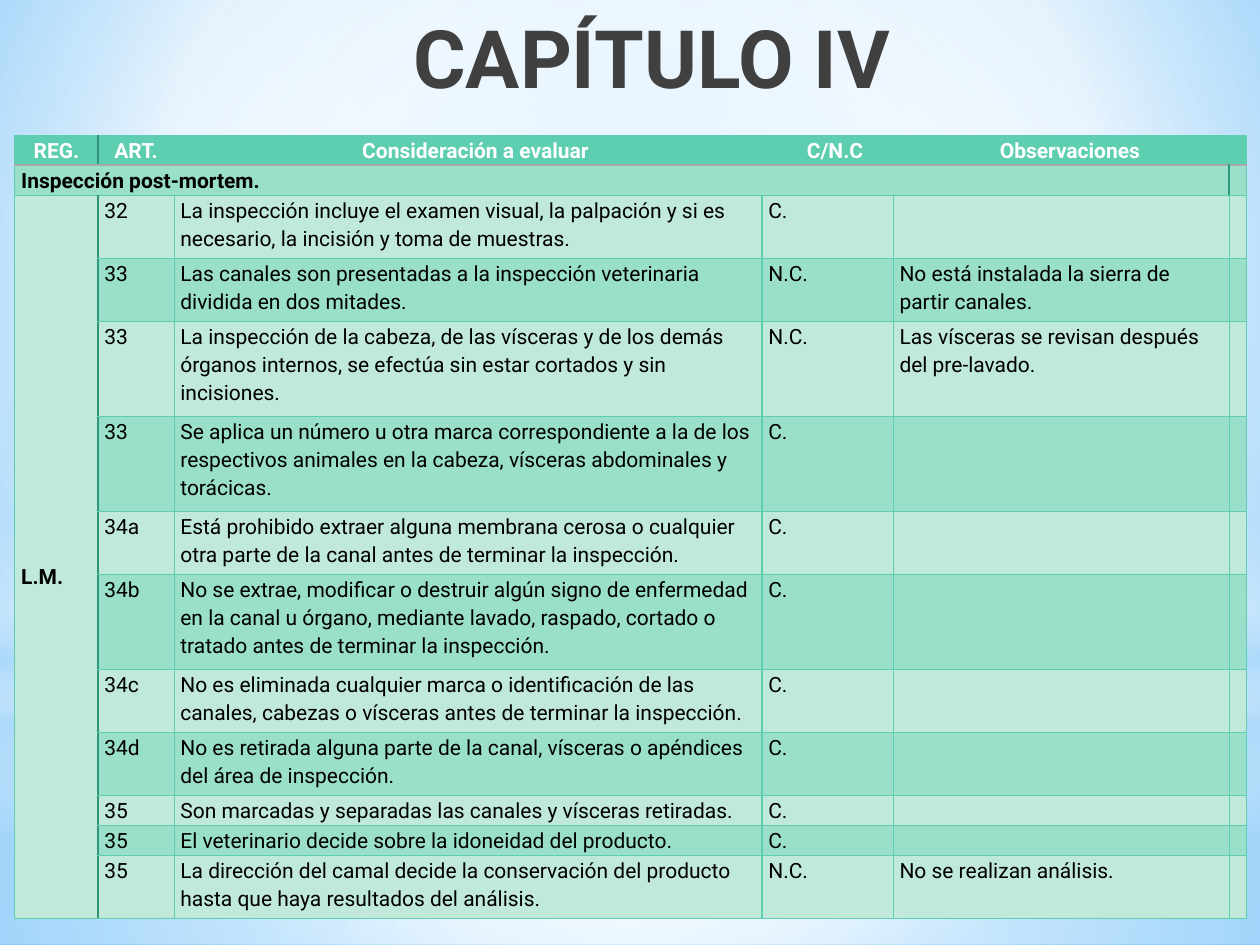
from lxml.etree import SubElement
from pptx import Presentation
from pptx.dml.color import RGBColor
from pptx.enum.shapes import MSO_SHAPE
from pptx.enum.text import MSO_ANCHOR, MSO_AUTO_SIZE, PP_ALIGN
from pptx.oxml.ns import qn
from pptx.util import Pt

COLORS = {
    "mint": "5DCEAF", "band": "99DFCA", "pale": "C0E9DA", "edge": "31957A",
    "rule": "A9A9A9", "title": "404040", "white": "FFFFFF", "black": "000000",
    "haze": "B4DCFA", "sky": "9ED5FF", "deep": "5BB9FF",
}
FONT = "Roboto"
CENTER = (50, 50, 50, 50)


def paint_gradient(owner, stops, focus=None):
    """Fill the owner's gradFill with (position, colour, opacity) stops, radial if a focus is given."""
    gradient = owner.find(".//" + qn("a:gradFill"))
    for child in list(gradient):
        gradient.remove(child)
    stop_list = SubElement(gradient, qn("a:gsLst"))
    for position, color, opacity in stops:
        stop = SubElement(stop_list, qn("a:gs"), pos=str(position * 1000))
        tint = SubElement(stop, qn("a:srgbClr"), val=COLORS[color])
        SubElement(tint, qn("a:alpha"), val=str(opacity * 1000))
    if focus:
        circle = SubElement(gradient, qn("a:path"), path="circle")
        SubElement(circle, qn("a:fillToRect"),
                   {side: str(share * 1000) for side, share in zip("ltrb", focus)})
    else:
        SubElement(gradient, qn("a:lin"), ang="5400000", scaled="0")


def add_border(cell, side, color, width):
    line = SubElement(cell._tc.get_or_add_tcPr(), qn("a:ln" + side), w=str(Pt(width)))
    fill = SubElement(line, qn("a:solidFill"))
    SubElement(fill, qn("a:srgbClr"), val=COLORS[color])


prs = Presentation()
prs.slide_width, prs.slide_height = Pt(720), Pt(540)
slide = prs.slides.add_slide(prs.slide_layouts[5])

# Background
slide.background.fill.gradient()
paint_gradient(slide._element,
               [(0, "sky", 100), (60, "white", 100), (100, "deep", 100)], (20, 10, 20, 60))
glows = [
    (MSO_SHAPE.RECTANGLE, 402, 138,
     [(0, "white", 91), (37, "white", 76), (100, "haze", 79)], CENTER),
    (MSO_SHAPE.RECTANGLE, 0, 402,
     [(0, "white", 89), (48, "white", 62), (100, "haze", 79)], CENTER),
    (MSO_SHAPE.RECTANGLE, 296.5, 180,
     [(0, "white", 0), (29, "white", 30), (45, "haze", 40), (55, "white", 26),
      (65, "haze", 60), (100, "white", 0)], None),
    (MSO_SHAPE.OVAL, 126, 402, [(0, "white", 100), (56, "white", 0)], CENTER),
]
for outline, top, height, stops, focus in glows:
    glow = slide.shapes.add_shape(outline, 0, Pt(top), Pt(720), Pt(height))
    glow.shadow.inherit = False
    glow.line.fill.background()
    glow.fill.gradient()
    paint_gradient(glow._element, stops, focus)

# Title, in front of the background
title = slide.shapes.title
slide.shapes._spTree.append(title._element)
title.left, title.top, title.width, title.height = Pt(116), Pt(0.7), Pt(512.5), Pt(90)
title.text_frame.text = "CAPÍTULO IV"
title.text_frame.auto_size = MSO_AUTO_SIZE.NONE
title.text_frame.vertical_anchor = MSO_ANCHOR.TOP
heading = title.text_frame.paragraphs[0]
heading.alignment = PP_ALIGN.CENTER
heading.font.name, heading.font.size, heading.font.bold = FONT, Pt(46), True
heading.font.color.rgb = RGBColor.from_string(COLORS["title"])

# Checklist: lines of text, article, consideration, result, observation
checks = [
    (2, "32", "La inspección incluye el examen visual, la palpación y si es necesario, "
     "la incisión y toma de muestras.", "C.", ""),
    (2, "33", "Las canales son presentadas a la inspección veterinaria dividida en dos mitades.",
     "N.C.", "No está instalada la sierra de partir canales."),
    (3, "33", "La inspección de la cabeza, de las vísceras y de los demás órganos internos, "
     "se efectúa sin estar cortados y sin incisiones.",
     "N.C.", "Las vísceras se revisan después del pre-lavado."),
    (3, "33", "Se aplica un número u otra marca correspondiente a la de los respectivos animales "
     "en la cabeza, vísceras abdominales y torácicas.", "C.", ""),
    (2, "34a", "Está prohibido extraer alguna membrana cerosa o cualquier otra parte de la canal "
     "antes de terminar la inspección.", "C.", ""),
    (3, "34b", "No se extrae, modificar o destruir algún signo de enfermedad en la canal u órgano, "
     "mediante lavado, raspado, cortado o tratado antes de terminar la inspección.", "C.", ""),
    (2, "34c", "No es eliminada cualquier marca o identificación de las canales, cabezas o vísceras "
     "antes de terminar la inspección.", "C.", ""),
    (2, "34d", "No es retirada alguna parte de la canal, vísceras o apéndices del área de inspección.",
     "C.", ""),
    (1, "35", "Son marcadas y separadas las canales y vísceras retiradas.", "C.", ""),
    (1, "35", "El veterinario decide sobre la idoneidad del producto.", "C.", ""),
    (2, "35", "La dirección del camal decide la conservación del producto hasta que haya "
     "resultados del análisis.", "N.C.", "No se realizan análisis."),
]
rows = [
    (1, ["REG.", "ART.", "Consideración a evaluar", "", "C/N.C", "Observaciones", ""]),
    (1, ["Inspección post-mortem."] + [""] * 6),
]
for lines, article, consideration, result, observation in checks:
    rows.append((lines, ["", article, consideration, result, "", observation, ""]))
rows[2][1][0] = "L.M."

column_widths = [47.5, 43.5, 336, 8.5, 66.5, 192, 8.5]
row_heights = {1: 17.15, 2: 36, 3: 54.3}
table = slide.shapes.add_table(len(rows), len(column_widths), Pt(8.5), Pt(77.2),
                               Pt(sum(column_widths)),
                               Pt(sum(row_heights[lines] for lines, _ in rows))).table
table.first_row = table.horz_banding = False
for column, width in zip(table.columns, column_widths):
    column.width = Pt(width)
for row, (lines, _) in zip(table.rows, rows):
    row.height = Pt(row_heights[lines])

last_row = len(rows) - 1
merges = [(0, 2, 0, 3), (0, 5, 0, 6), (1, 0, 1, 5), (2, 0, last_row, 0)]
merges += [(r, 3, r, 4) for r in range(2, last_row + 1)]
for top, left, bottom, right in merges:
    table.cell(top, left).merge(table.cell(bottom, right))

for r, (_, texts) in enumerate(rows):
    for c, text in enumerate(texts):
        cell = table.cell(r, c)
        cell.margin_left = cell.margin_right = Pt(3.6)
        cell.margin_top = cell.margin_bottom = 0
        cell.text = text
        paragraph = cell.text_frame.paragraphs[0]
        paragraph.line_spacing = 1.15
        paragraph.alignment = PP_ALIGN.CENTER if r == 0 else PP_ALIGN.LEFT
        paragraph.font.name, paragraph.font.size = FONT, Pt(12)
        paragraph.font.bold = r < 2 or c == 0
        paragraph.font.color.rgb = RGBColor.from_string(COLORS["white" if r == 0 else "black"])

        strong_column = 6 if r == 1 else 1
        for side, column in (("L", c), ("R", c + cell.span_width)):
            strong = column == strong_column
            add_border(cell, side, "edge" if strong else "mint", 1.25 if strong else 0.75)
        for side, row in (("T", r), ("B", r + cell.span_height)):
            strong = row == 1
            add_border(cell, side, "rule" if strong else "mint", 1.25 if strong else 0.75)

        banded = r % 2 == 1 and (c > 0 or r == 1)
        shade = "mint" if r == 0 else "band" if banded else "pale"
        cell.fill.solid()
        cell.fill.fore_color.rgb = RGBColor.from_string(COLORS[shade])

law = table.cell(2, 0)
law.vertical_anchor = MSO_ANCHOR.MIDDLE
law.margin_top = Pt(22)

prs.save("out.pptx")
